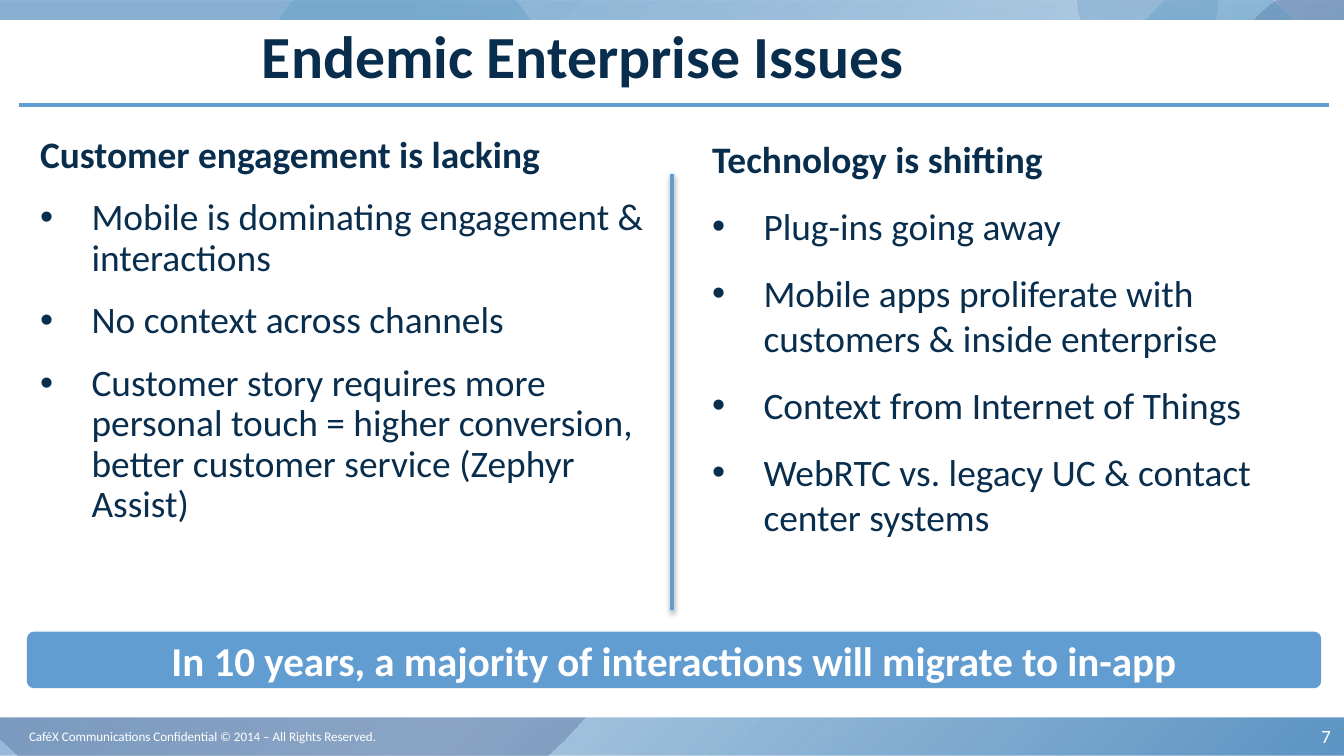
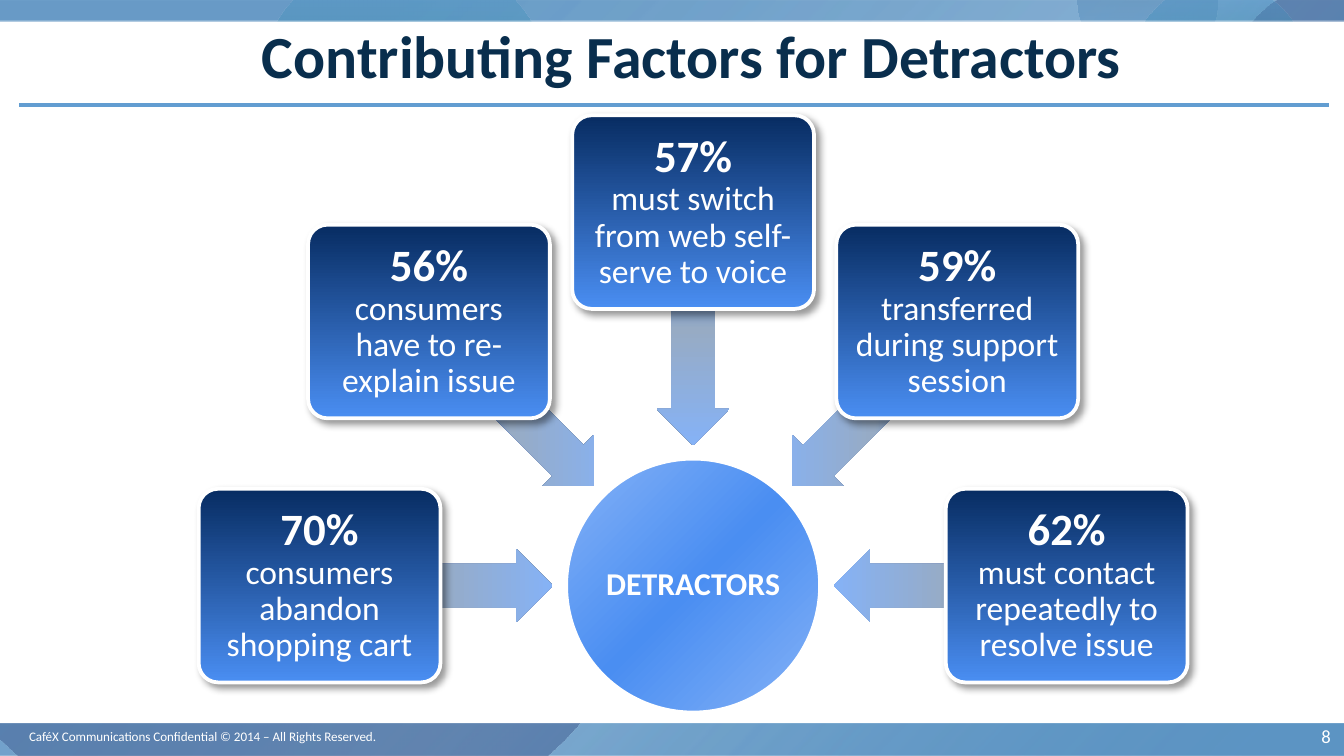
from math import cos, radians, sin

from pptx import Presentation
from pptx.dml.color import RGBColor
from pptx.enum.shapes import MSO_CONNECTOR, MSO_SHAPE
from pptx.enum.text import MSO_ANCHOR, MSO_AUTO_SIZE, PP_ALIGN
from pptx.oxml import parse_xml
from pptx.oxml.ns import nsdecls, qn
from pptx.util import Cm, Pt

FONT = "Calibri"
WHITE = RGBColor(0xFF, 0xFF, 0xFF)
NAVY = RGBColor(0x09, 0x2E, 0x4D)
ACCENT = RGBColor(0x62, 0x9D, 0xD1)
BAND_BLUE = RGBColor(0x5C, 0x94, 0xC3)
INDIGO = RGBColor(0x38, 0x4C, 0x81)
STEEL = RGBColor(0x35, 0x5D, 0x81)
GREEN = RGBColor(0x05, 0x75, 0x50)
SKY = RGBColor(0x5A, 0x9E, 0xD9)
DEEP = RGBColor(0x07, 0x2C, 0x62)
BRIGHT = RGBColor(0x4A, 0x8E, 0xF2)
PALE = RGBColor(0x85, 0xB2, 0xF6)
COBALT = RGBColor(0x0E, 0x58, 0xC4)
GREY_BLUE = RGBColor(0x97, 0xAB, 0xC4)
BLACK = RGBColor(0, 0, 0)

FOOTER = "CaféX Communications Confidential © 2014 – All Rights Reserved."
FIRST_NUMBER = 7

ISSUES_TITLE = "Endemic Enterprise Issues"
ISSUES = [
    {
        "heading": "Customer engagement is lacking",
        "points": [
            "Mobile is dominating engagement & interactions",
            "No context across channels",
            "Customer story requires more personal touch = higher conversion, "
            "better customer service (Zephyr Assist)",
        ],
        "left": 0.51, "width": 11.94, "spacing": 0.9,
    },
    {
        "heading": "Technology is shifting",
        "points": [
            "Plug-ins going away",
            "Mobile apps proliferate with customers & inside enterprise",
            "Context from Internet of Things",
            "WebRTC vs. legacy UC & contact center systems",
        ],
        "left": 13.21, "width": 12.14, "spacing": 1.0,
    },
]
CONCLUSION = "In 10 years, a majority of interactions will migrate to in-app"

FACTORS_TITLE = "Contributing Factors for Detractors"
HUB = "DETRACTORS"
FACTORS = [
    ("70%", "consumers abandon shopping cart", 0),
    ("56%", "consumers have to re-explain issue", 0),
    ("57%", "must switch from web self-serve to voice", 90),
    ("59%", "transferred during support session", 180),
    ("62%", "must contact repeatedly to resolve issue", 180),
]

HUB_X, HUB_Y, HUB_SIZE = 13.1, 11.07, 4.8
CARD_RADIUS, CARD_WIDTH, CARD_HEIGHT = 7.06, 4.57, 3.66
ARROW_RADIUS, ARROW_LENGTH, ARROW_HEIGHT = 4.85, 4.39, 1.37

BAND_STOPS = [(20, BAND_BLUE, 72), (55, BAND_BLUE, 50), (100, BAND_BLUE, 100)]
INDIGO_STOPS = [(0, INDIGO, 28), (100, INDIGO, 29)]
GREEN_STOPS = [(0, GREEN, 40), (100, SKY, 25)]
STEEL_STOPS = [(0, STEEL, 18), (100, SKY, 25)]
CARD_STOPS = [(0, DEEP, 100), (100, BRIGHT, 100)]
ARROW_STOPS = [(0, COBALT, 100), (50, GREY_BLUE, 100), (100, PALE, 100)]
HUB_STOPS = [(0, PALE, 100), (50, BRIGHT, 100), (100, PALE, 100)]
BUBBLES = [
    ((-2.13, 1.4, 14.94, 14.76), 0, INDIGO_STOPS),
    ((4.83, -0.89, 5.61, 5.46), 180, GREEN_STOPS),
    ((20.37, -1.32, 2.64, 2.64), 0, STEEL_STOPS),
    ((23.06, -0.41, 4.78, 4.8), 0, INDIGO_STOPS),
    ((21.36, -0.33, 3.33, 3.25), 180, GREEN_STOPS),
]


def write(frame, text, size=20, color=NAVY, bold=False, align=PP_ALIGN.LEFT,
          spacing=1.0, before=0, bullet=False, join=False):
    para = frame.paragraphs[-1]
    if not join:
        if frame.text:
            para = frame.add_paragraph()
        properties = para._p.get_or_add_pPr()
        indent = Cm(0.97) if bullet else 0
        properties.set("marL", str(indent))
        properties.set("indent", str(-indent))
        mark = '<a:buChar %s char="•"/>' if bullet else "<a:buNone %s/>"
        properties.append(parse_xml(mark % nsdecls("a")))
        para.alignment = align
        para.line_spacing = spacing
        para.space_before = Pt(before)
        para.space_after = Pt(0)
    span = para.add_run()
    span.text = text
    span.font.name = FONT
    span.font.size = Pt(size)
    span.font.bold = bold
    span.font.color.rgb = color


def prepare(frame, anchor=MSO_ANCHOR.MIDDLE, inset_x=0.25, inset_y=0.13):
    frame.word_wrap = True
    frame.auto_size = MSO_AUTO_SIZE.NONE
    frame.vertical_anchor = anchor
    frame.margin_left = frame.margin_right = Cm(inset_x)
    frame.margin_top = frame.margin_bottom = Cm(inset_y)
    return frame


def place(shape, left, top, width, height):
    shape.left, shape.top, shape.width, shape.height = map(Cm, (left, top, width, height))


def add_box(page, *area):
    return prepare(page.shapes.add_textbox(*map(Cm, area)).text_frame)


def claim(placeholder, area, anchor):
    placeholder.element.getparent().append(placeholder.element)
    place(placeholder, *area)
    return prepare(placeholder.text_frame, anchor)


def add_shadow(effects, opacity, blur, distance, angle):
    effects.append(parse_xml(
        f'<a:outerShdw {nsdecls("a")} blurRad="{Pt(blur)}" dist="{Pt(distance)}" '
        f'dir="{angle * 60000}" rotWithShape="0"><a:srgbClr val="{BLACK}">'
        f'<a:alpha val="{opacity * 1000}"/></a:srgbClr></a:outerShdw>'))


def paint_gradient(shape, stops, angle, circular=False, turns=True):
    marks = "".join(
        f'<a:gs pos="{position * 1000}"><a:srgbClr val="{color}">'
        f'<a:alpha val="{opacity * 1000}"/></a:srgbClr></a:gs>'
        for position, color, opacity in stops)
    course = f'<a:lin ang="{angle * 60000}" scaled="0"/>'
    if circular:
        course = '<a:path path="circle"><a:fillToRect l="100000" t="100000"/></a:path>'
    shape.fill.solid()
    properties = shape.element.spPr
    properties.replace(properties.find(qn("a:solidFill")), parse_xml(
        f'<a:gradFill {nsdecls("a")} rotWithShape="{int(turns)}">'
        f'<a:gsLst>{marks}</a:gsLst>{course}</a:gradFill>'))


def add_figure(page, kind, area, color=None, outline=None, adjustments=(), rotation=0):
    shape = page.shapes.add_shape(kind, *map(Cm, area))
    shape.shadow.inherit = False
    shape.rotation = rotation
    for index, value in enumerate(adjustments):
        shape.adjustments[index] = value
    if color is not None:
        shape.fill.solid()
        shape.fill.fore_color.rgb = color
    if outline is None:
        shape.line.fill.background()
    else:
        shape.line.color.rgb = outline
        shape.line.width = Pt(2)
    return shape


def add_rule(page, *ends, shadow=False):
    rule = page.shapes.add_connector(MSO_CONNECTOR.STRAIGHT, *map(Cm, ends))
    rule.line.color.rgb = ACCENT
    rule.line.width = Pt(2)
    effects = parse_xml(f'<a:effectLst {nsdecls("a")}/>')
    rule.element.spPr.append(effects)
    if shadow:
        add_shadow(effects, 38, 3.1, 1.6, 90)


def add_backdrop(page, top, height):
    band = add_figure(page, MSO_SHAPE.RECTANGLE, (-0.05, 0, 25.48, 14.29))
    paint_gradient(band, BAND_STOPS, 44)
    for area, rotation, stops in BUBBLES:
        bubble = add_figure(page, MSO_SHAPE.ROUNDED_RECTANGLE, area,
                            adjustments=[0.5], rotation=rotation)
        paint_gradient(bubble, stops, 90)
    add_figure(page, MSO_SHAPE.RECTANGLE, (-0.05, top, 25.48, height), WHITE)


def add_page(deck, layout, title, sheets):
    page = deck.slides.add_slide(deck.slide_layouts[layout])
    for sheet in sheets:
        add_backdrop(page, *sheet)
    add_rule(page, 0.36, 1.98, 25.12, 1.98)
    write(add_box(page, 0.3, 13.54, 10.82, 0.76), FOOTER, size=7, color=WHITE)
    number = str(FIRST_NUMBER + len(deck.slides) - 1)
    write(add_box(page, 19.48, 13.54, 5.92, 0.76), number, size=10, color=WHITE,
          align=PP_ALIGN.RIGHT)
    frame = claim(page.shapes.title, (4.7, 0.38, 20.22, 1.57), MSO_ANCHOR.MIDDLE)
    write(frame, title, size=32, bold=True, spacing=0.8)
    return page


def build_issues(deck):
    page = add_page(deck, 3, ISSUES_TITLE, [(0.38, 13.18)])
    for index, column in enumerate(ISSUES, 1):
        area = (column["left"], 2.44, column["width"], 9.58)
        frame = claim(page.placeholders[index], area, MSO_ANCHOR.TOP)
        write(frame, column["heading"], bold=True, spacing=column["spacing"])
        for point in column["points"]:
            write(frame, point, spacing=column["spacing"], before=12, bullet=True)
    add_rule(page, 12.7, 3.28, 12.7, 11.53, shadow=True)
    banner = add_figure(page, MSO_SHAPE.ROUNDED_RECTANGLE, (0.51, 11.94, 24.46, 1.07),
                        ACCENT, adjustments=[0.125])
    write(prepare(banner.text_frame), CONCLUSION, size=22, color=WHITE, bold=True,
          align=PP_ALIGN.CENTER)


def around_hub(angle, radius, width, height):
    return (HUB_X + radius * cos(radians(angle)) - width / 2,
            HUB_Y + radius * sin(radians(angle)) - height / 2, width, height)


def build_factors(deck):
    page = add_page(deck, 5, FACTORS_TITLE, [(0.38, 13.18), (0.41, 13.26)])
    hub = add_figure(page, MSO_SHAPE.OVAL, around_hub(0, 0, HUB_SIZE, HUB_SIZE),
                     outline=WHITE)
    paint_gradient(hub, HUB_STOPS, 0, circular=True)
    write(prepare(hub.text_frame, inset_x=0.03, inset_y=0.03), HUB, size=17,
          color=WHITE, bold=True, align=PP_ALIGN.CENTER, spacing=0.9)
    for index, (share, reason, shade_angle) in enumerate(FACTORS):
        angle = 180 + 45 * index
        arrow = add_figure(page, MSO_SHAPE.LEFT_ARROW,
                           around_hub(angle, ARROW_RADIUS, ARROW_LENGTH, ARROW_HEIGHT),
                           adjustments=[0.6, 0.5], rotation=angle % 360)
        paint_gradient(arrow, ARROW_STOPS, shade_angle, turns=False)
        card = add_figure(page, MSO_SHAPE.ROUNDED_RECTANGLE,
                          around_hub(angle, CARD_RADIUS, CARD_WIDTH, CARD_HEIGHT),
                          outline=WHITE, adjustments=[0.1])
        paint_gradient(card, CARD_STOPS, 90)
        add_shadow(card.element.spPr.find(qn("a:effectLst")), 40, 4, 3, 45)
        frame = prepare(card.text_frame, inset_x=0.13)
        for text, size, bold in ((share, 24, True), (reason, 18, False)):
            write(frame, text, size=size, color=WHITE, bold=bold,
                  align=PP_ALIGN.CENTER, spacing=0.9)


def main():
    deck = Presentation()
    deck.slide_width, deck.slide_height = Cm(25.4), Cm(14.29)
    build_issues(deck)
    build_factors(deck)
    deck.save("out.pptx")


if __name__ == "__main__":
    main()
